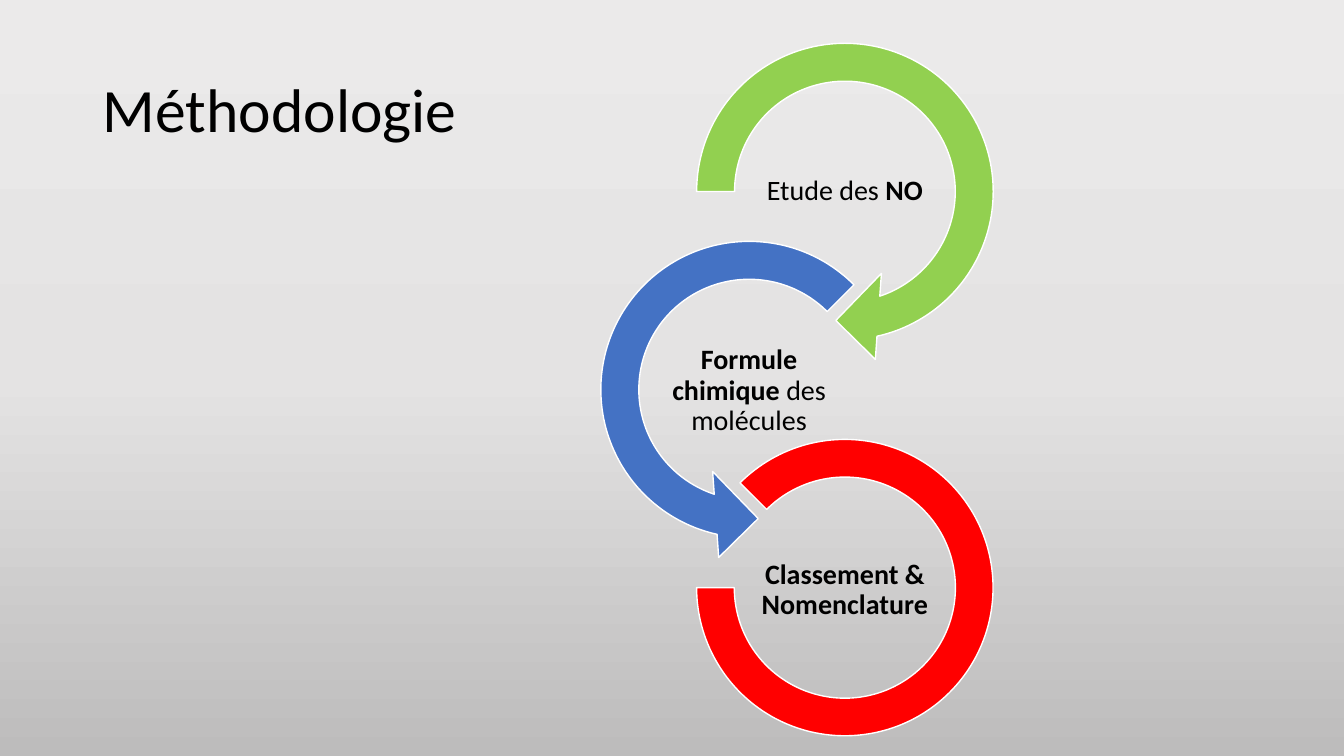
from copy import deepcopy
from dataclasses import dataclass

from pptx import Presentation
from pptx.dml.color import RGBColor
from pptx.enum.shapes import MSO_SHAPE
from pptx.enum.text import MSO_ANCHOR, MSO_AUTO_SIZE, PP_ALIGN
from pptx.oxml.ns import qn
from pptx.slide import Slide
from pptx.util import Inches, Pt

SLIDE_WIDTH, SLIDE_HEIGHT = 13.33, 7.5
FONT = "Calibri"
COLORS = {
    "text": "000000",
    "outline": "FFFFFF",
    "study": "92D050",
    "formula": "4472C4",
    "naming": "FF0000",
}
BACKDROP = [(0, "EBEAEA"), (0.5, "E4E3E3"), (1, "BDBCBC")]

# The rings zigzag over two columns and three rows of centres.
FIRST_CENTER_X, COLUMN_PITCH = 7.43, 0.95
FIRST_CENTER_Y, RING_PITCH, LABEL_PITCH = 1.9, 1.965, 1.98
LABEL_WIDTH, LABEL_HEIGHT = 1.9, 0.95
ARROW_SIZE, ARC_SIZE = 3.42, 2.94


@dataclass(frozen=True)
class Step:
    column: int
    row: int
    outline: MSO_SHAPE
    size: float
    adjustments: tuple[float, ...]
    color: str
    words: tuple[tuple[str, bool], ...]  # text, bold


STEPS = [
    Step(1, 0, MSO_SHAPE.CIRCULAR_ARROW, ARROW_SIZE,
         (0.11, 11.42, 45, 108, 0.125), "study",
         (("Etude des ", False), ("NO", True))),
    Step(0, 1, MSO_SHAPE.LEFT_CIRCULAR_ARROW, ARROW_SIZE,
         (0.11, 11.42, 63, 189, 0.125), "formula",
         (("Formule chimique ", True), ("des molécules", False))),
    Step(1, 2, MSO_SHAPE.BLOCK_ARC, ARC_SIZE,
         (135, 108, 0.127), "naming",
         (("Classement & Nomenclature", True),)),
]


def rgb(name: str) -> RGBColor:
    return RGBColor.from_string(COLORS[name])


def centered_box(x: float, y: float, width: float, height: float) -> list[int]:
    """Left, top, width and height of a box around the point (x, y)."""
    return [Inches(v) for v in (x - width / 2, y - height / 2, width, height)]


def paint_background(slide: Slide) -> None:
    fill = slide.background.fill
    fill.gradient()
    fill.gradient_angle = 270
    stop_list = next(slide.element.iter(qn("a:gsLst")))
    stop_list.insert(1, deepcopy(stop_list[0]))
    for stop, (position, color) in zip(fill.gradient_stops, BACKDROP):
        stop.position = position
        stop.color.rgb = RGBColor.from_string(color)


def add_title(slide: Slide, wording: str) -> None:
    title = slide.shapes.title
    title.left, title.width = (Inches(SLIDE_WIDTH * s) for s in (0.069, 0.8625))
    title.top, title.height = (Inches(SLIDE_HEIGHT * s) for s in (0.053, 0.193))
    frame = title.text_frame
    frame.text = wording
    frame.auto_size = MSO_AUTO_SIZE.NONE
    frame.vertical_anchor = MSO_ANCHOR.MIDDLE
    heading = frame.paragraphs[0]
    heading.alignment = PP_ALIGN.LEFT
    heading.line_spacing = 0.9
    heading.font.name, heading.font.size = FONT, Pt(44)
    heading.font.color.rgb = rgb("text")


def add_ring(slide: Slide, step: Step, center_x: float) -> None:
    center_y = FIRST_CENTER_Y + step.row * RING_PITCH
    ring = slide.shapes.add_shape(
        step.outline, *centered_box(center_x, center_y, step.size, step.size))
    for index, value in enumerate(step.adjustments):
        ring.adjustments[index] = value
    ring.shadow.inherit = False
    ring.fill.solid()
    ring.fill.fore_color.rgb = rgb(step.color)
    ring.line.color.rgb = rgb("outline")
    ring.line.width = Pt(1)


def add_label(slide: Slide, step: Step, center_x: float) -> None:
    center_y = FIRST_CENTER_Y + step.row * LABEL_PITCH
    label = slide.shapes.add_textbox(
        *centered_box(center_x, center_y, LABEL_WIDTH, LABEL_HEIGHT))
    frame = label.text_frame
    frame.word_wrap = True
    frame.vertical_anchor = MSO_ANCHOR.MIDDLE
    frame.margin_left = frame.margin_right = Inches(0.01)
    frame.margin_top = frame.margin_bottom = Inches(0.01)
    caption = frame.paragraphs[0]
    caption.alignment = PP_ALIGN.CENTER
    caption.line_spacing = 0.9
    caption.font.name, caption.font.size = FONT, Pt(20)
    caption.font.color.rgb = rgb("text")
    for wording, bold in step.words:
        run = caption.add_run()
        run.text = wording
        run.font.bold = bold


def main() -> None:
    deck = Presentation()
    deck.slide_width, deck.slide_height = Inches(SLIDE_WIDTH), Inches(SLIDE_HEIGHT)
    slide = deck.slides.add_slide(deck.slide_layouts.get_by_name("Title Only"))
    paint_background(slide)
    add_title(slide, "Méthodologie")
    for step in STEPS:
        center_x = FIRST_CENTER_X + step.column * COLUMN_PITCH
        add_ring(slide, step, center_x)
        add_label(slide, step, center_x)
    deck.save("out.pptx")


if __name__ == "__main__":
    main()
